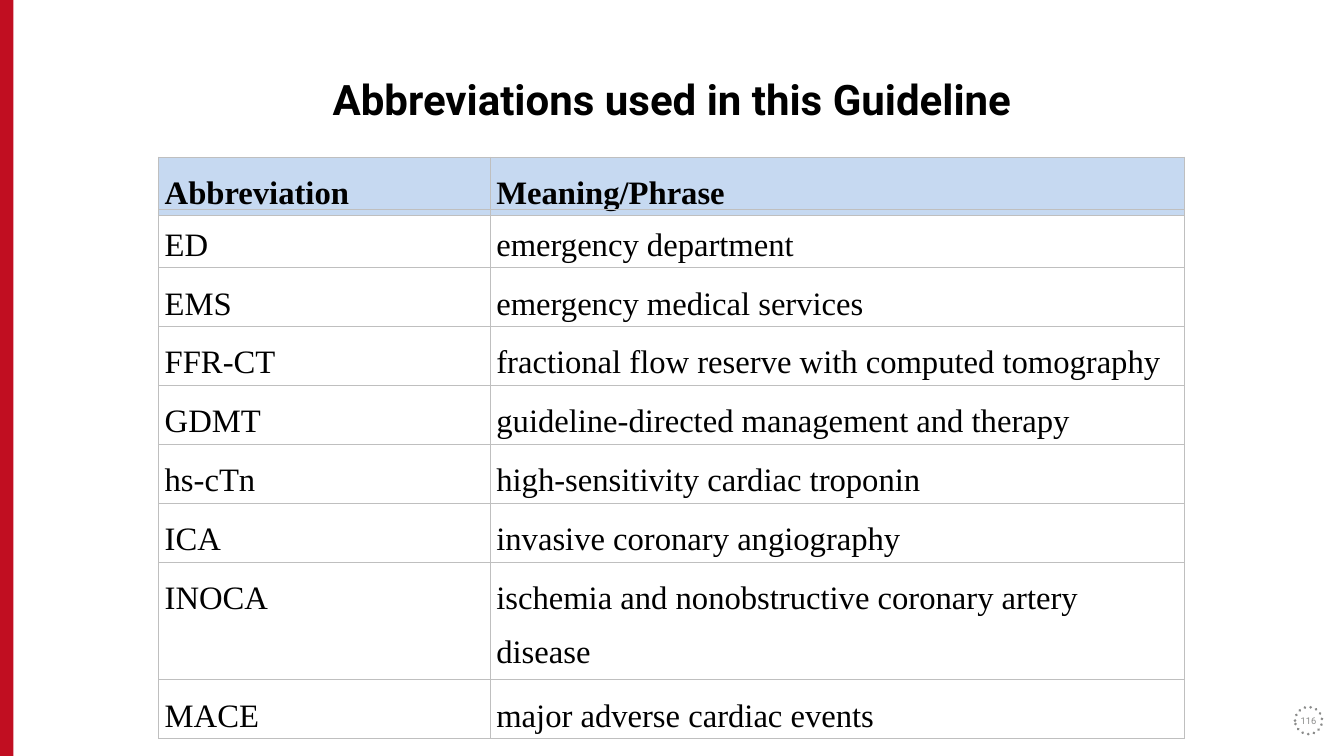
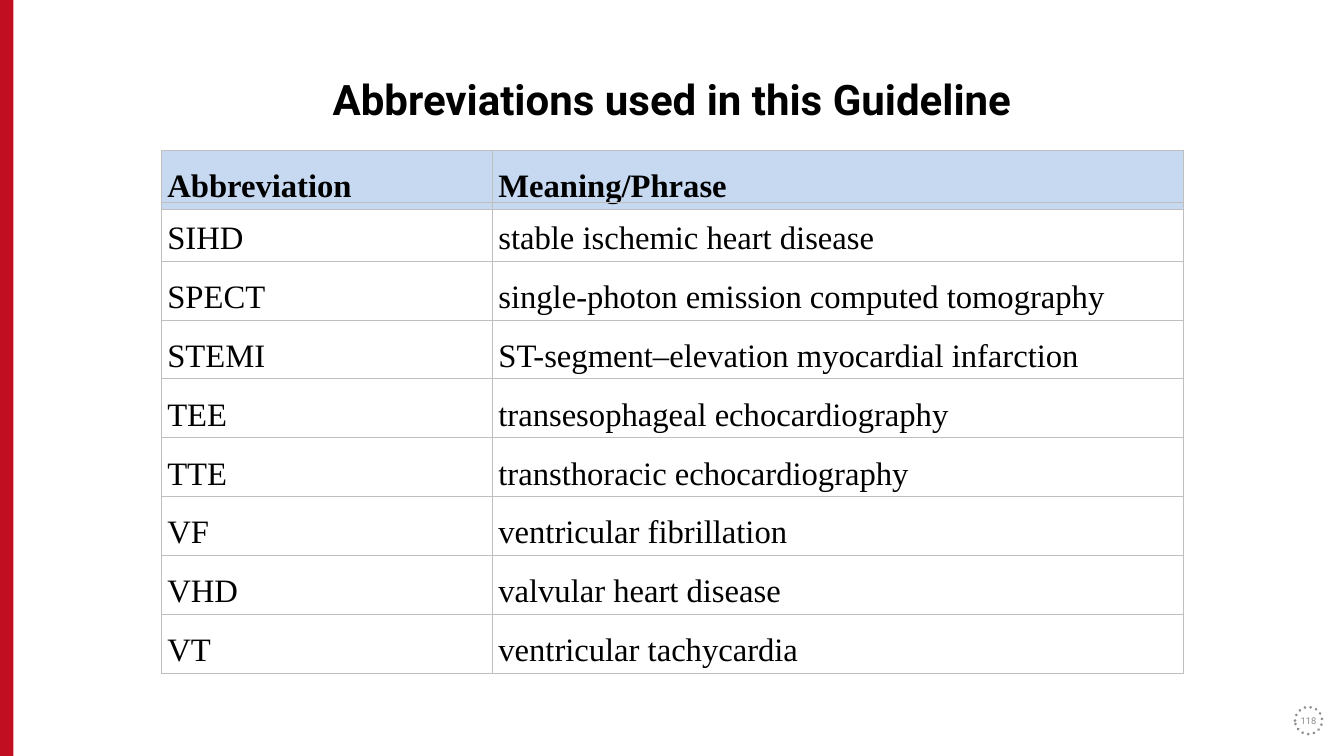
from lxml import etree
from pptx import Presentation
from pptx.dml.color import RGBColor
from pptx.enum.dml import MSO_LINE
from pptx.enum.shapes import MSO_SHAPE
from pptx.enum.text import MSO_ANCHOR, MSO_AUTO_SIZE, PP_ALIGN
from pptx.oxml.ns import qn
from pptx.util import Cm, Pt

RECTANGLE, OVAL = MSO_SHAPE.RECTANGLE, MSO_SHAPE.OVAL
TOP, MIDDLE = MSO_ANCHOR.TOP, MSO_ANCHOR.MIDDLE
CENTER = PP_ALIGN.CENTER
GROW = MSO_AUTO_SIZE.SHAPE_TO_FIT_TEXT
DOTTED = MSO_LINE.ROUND_DOT

RED = RGBColor(0xC1, 0x0E, 0x21)
GRAY = RGBColor(0x8A, 0x8B, 0x8A)
BLACK = RGBColor(0x00, 0x00, 0x00)
HEADER_BLUE = RGBColor(0xC6, 0xD9, 0xF1)
BORDER_GRAY = RGBColor(0xBF, 0xBF, 0xBF)

SANS, SERIF = "Roboto", "Times New Roman"
WIDTH, HEIGHT = Cm(40.64), Cm(22.86)
ROW_HEIGHT = Cm(1.57)
TITLE_ONLY = 5
TITLE = "Abbreviations used in this Guideline"
TITLE_BOX = (Cm(7.52), Cm(2.11), Cm(25.6), Cm(1.8))
PAGE_BOX = (Cm(38.96), Cm(21.18), Cm(1.22), Cm(1.22))
HEADINGS = [("Abbreviation", "Meaning/Phrase")]

PAGES = [
    ("116", (Cm(4.8), Cm(4.75)), (Cm(10.03), Cm(20.98)), [
        ("ED", "emergency department"),
        ("EMS", "emergency medical services"),
        ("FFR-CT", "fractional flow reserve with computed tomography"),
        ("GDMT", "guideline-directed management and therapy"),
        ("hs-cTn", "high-sensitivity cardiac troponin"),
        ("ICA", "invasive coronary angiography"),
        ("INOCA", "ischemia and nonobstructive coronary artery disease"),
        ("MACE", "major adverse cardiac events"),
    ]),
    ("118", (Cm(4.88), Cm(4.55)), (Cm(10.01), Cm(20.9)), [
        ("SIHD", "stable ischemic heart disease"),
        ("SPECT", "single-photon emission computed tomography"),
        ("STEMI", "ST-segment–elevation myocardial infarction"),
        ("TEE", "transesophageal echocardiography"),
        ("TTE", "transthoracic echocardiography"),
        ("VF", "ventricular fibrillation"),
        ("VHD", "valvular heart disease"),
        ("VT", "ventricular tachycardia"),
    ]),
]


def add_text(paragraph, text, font, size, color, bold=False):
    """Add one formatted run to a paragraph."""
    run = paragraph.add_run()
    run.text = text
    run.font.name = font
    run.font.size = Pt(size)
    run.font.color.rgb = color
    run.font.bold = bold


def add_side_band(slide):
    """Draw the red band down the left edge."""
    band = slide.shapes.add_shape(RECTANGLE, 0, 0, Cm(0.41), HEIGHT)
    band.shadow.inherit = False
    band.fill.solid()
    band.fill.fore_color.rgb = RED
    band.line.fill.background()


def add_page_number(slide, number, box):
    """Draw a page number inside a dotted ring."""
    left, top, width, height = box
    inset = Cm(0.2)
    ring = slide.shapes.add_shape(
        OVAL, left + inset, top + inset, width - 2 * inset, height - 2 * inset)
    ring.shadow.inherit = False
    ring.fill.background()
    ring.line.color.rgb = GRAY
    ring.line.width = Pt(2.5)
    ring.line.dash_style = DOTTED
    ring.get_or_add_ln().set("cap", "rnd")

    frame = slide.shapes.add_textbox(*box).text_frame
    frame.word_wrap = True
    frame.vertical_anchor = MIDDLE
    frame.paragraphs[0].alignment = CENTER
    add_text(frame.paragraphs[0], number, SANS, 8, GRAY)


def set_title(slide, text, box):
    """Place and fill the title placeholder."""
    title = slide.shapes.title
    title.left, title.top, title.width, title.height = box
    frame = title.text_frame
    frame.word_wrap = True
    frame.auto_size = GROW
    frame.vertical_anchor = TOP
    frame.paragraphs[0].alignment = CENTER
    add_text(frame.paragraphs[0], text, SANS, 36, BLACK, bold=True)


def add_borders(cell):
    """Give a cell thin gray lines on all four sides."""
    properties = cell._tc.get_or_add_tcPr()
    for side in ("a:lnL", "a:lnR", "a:lnT", "a:lnB"):
        line = etree.SubElement(properties, qn(side), w=str(Pt(1)))
        fill = etree.SubElement(line, qn("a:solidFill"))
        etree.SubElement(fill, qn("a:srgbClr"), val=str(BORDER_GRAY))


def add_terms(slide, rows, left, top, widths, header=False):
    """Add a table of abbreviations and their meanings."""
    terms = slide.shapes.add_table(
        len(rows), len(widths), left, top, sum(widths), ROW_HEIGHT * len(rows)).table
    terms.first_row = header
    terms.horz_banding = False
    for column, width in zip(terms.columns, widths):
        column.width = width
    for row, texts in zip(terms.rows, rows):
        row.height = ROW_HEIGHT
        for cell, text in zip(row.cells, texts):
            add_borders(cell)
            cell.margin_left = cell.margin_right = Cm(0.18)
            cell.margin_top = cell.margin_bottom = 0
            if header:
                cell.fill.solid()
                cell.fill.fore_color.rgb = HEADER_BLUE
            else:
                cell.fill.background()
            paragraph = cell.text_frame.paragraphs[0]
            paragraph.line_spacing = 1.5
            add_text(paragraph, text, SERIF, 28, BLACK, header)


def add_abbreviations_slide(deck, number, corner, widths, rows):
    """Build one page of the abbreviation list."""
    slide = deck.slides.add_slide(deck.slide_layouts[TITLE_ONLY])
    left, top = corner
    add_side_band(slide)
    add_page_number(slide, number, PAGE_BOX)
    set_title(slide, TITLE, TITLE_BOX)
    add_terms(slide, HEADINGS, left, top, widths, header=True)
    add_terms(slide, rows, left, top + ROW_HEIGHT, widths)


def main():
    """Build and save the deck."""
    deck = Presentation()
    deck.slide_width, deck.slide_height = WIDTH, HEIGHT
    for page in PAGES:
        add_abbreviations_slide(deck, *page)
    deck.save("out.pptx")


if __name__ == "__main__":
    main()
